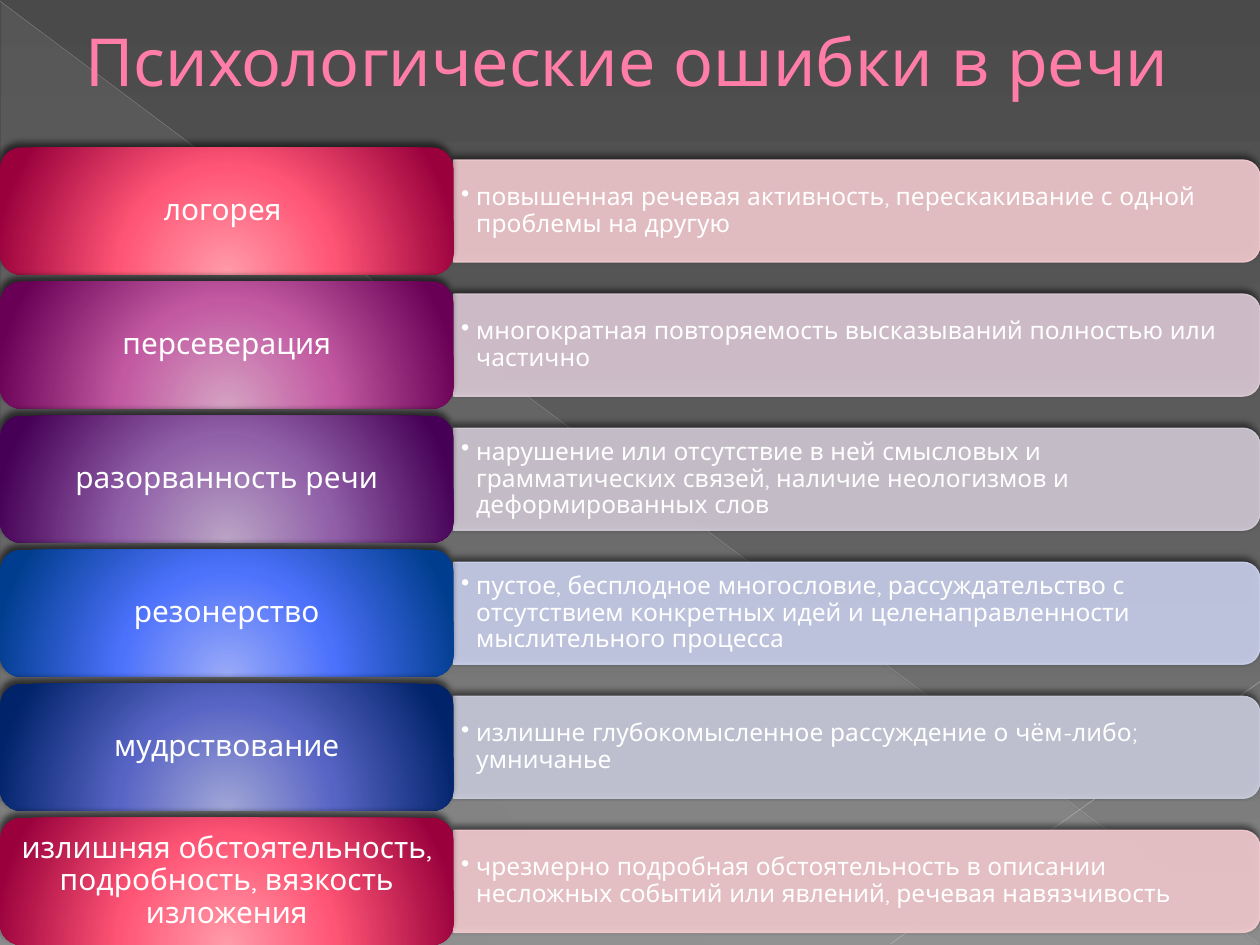
from lxml import etree
from pptx import Presentation
from pptx.dml.color import RGBColor
from pptx.enum.shapes import MSO_CONNECTOR, MSO_SHAPE
from pptx.enum.text import MSO_ANCHOR, PP_ALIGN
from pptx.oxml.ns import qn
from pptx.util import Emu, Inches, Pt

STRAIGHT = MSO_CONNECTOR.STRAIGHT
TRIANGLE = MSO_SHAPE.RIGHT_TRIANGLE
ROUNDED = MSO_SHAPE.ROUNDED_RECTANGLE
ROUNDED_TOP = MSO_SHAPE.ROUND_2_SAME_RECTANGLE
MIDDLE = MSO_ANCHOR.MIDDLE
CENTER, LEFT = PP_ALIGN.CENTER, PP_ALIGN.LEFT

FONT = "Quicksand"
COLORS = {
    "text": "FFFFFF", "title": "FF7DA7", "title_outline": "B12761",
    "shadow": "000000", "triangle": "D2D2D2",
    "long_line": "BFBFBF", "short_line": "C6C6C6",
    "back_top": "4A4A4A", "back_middle": "626262", "back_bottom": "8C8C8C",
}
PALETTES = {
    "red": ("F5CCD1", "FF9BA9", "FF5575", "99003C"),
    "magenta": ("DECCD8", "D5A2C3", "C259A1", "690055"),
    "purple": ("D4CCD8", "BBA5C6", "905FA8", "460055"),
    "blue": ("CCD2EF", "9AAAF8", "4C71FB", "003D8E"),
    "indigo": ("CCCEDF", "A1A6D6", "5864C4", "00236A"),
}
ROWS = [
    ("red", "логорея ",
     "повышенная речевая активность, перескакивание с одной проблемы на другую"),
    ("magenta", "персеверация",
     "многократная повторяемость высказываний полностью или частично"),
    ("purple", "разорванность речи",
     "нарушение или отсутствие в ней смысловых и грамматических связей, "
     "наличие неологизмов и деформированных слов"),
    ("blue", "резонерство",
     "пустое, бесплодное многословие, рассуждательство с отсутствием "
     "конкретных идей и целенаправленности мыслительного процесса"),
    ("indigo", "мудрствование",
     "излишне глубокомысленное рассуждение о чём-либо; умничанье"),
    ("red", "излишняя обстоятельность, подробность, вязкость изложения",
     "чрезмерно подробная обстоятельность в описании несложных событий "
     "или явлений, речевая навязчивость"),
]
SLIDE_WIDTH, SLIDE_HEIGHT = Inches(10), Inches(7.5)
LABEL_WIDTH, LABEL_HEIGHT = Inches(3.6), Inches(1.01)
BAR_HEIGHT = Inches(0.81)
FIRST_TOP = Inches(1.17)
PITCH = (SLIDE_HEIGHT - LABEL_HEIGHT - FIRST_TOP) / (len(ROWS) - 1)


def add_node(parent, tag, **attributes):
    values = {name: str(value) for name, value in attributes.items()}
    return etree.SubElement(parent, qn(tag), values)


def add_color(parent, color, opacity=100):
    node = add_node(parent, "a:srgbClr", val=color)
    add_node(node, "a:alpha", val=opacity * 1000)


def set_opacity(element, opacity):
    for color in element.iter(qn("a:srgbClr")):
        add_node(color, "a:alpha", val=opacity * 1000)


def set_gradient(element, fill, stops, angle=None):
    fill.solid()
    solid = element.find(".//" + qn("a:solidFill"))
    gradient = etree.Element(qn("a:gradFill"), rotWithShape="1")
    stop_list = add_node(gradient, "a:gsLst")
    for position, *color in stops:
        add_color(add_node(stop_list, "a:gs", pos=position * 1000), *color)
    if angle is None:
        circle = add_node(gradient, "a:path", path="circle")
        add_node(circle, "a:fillToRect", l=50000, t=155000, r=50000, b=-55000)
    else:
        add_node(gradient, "a:lin", ang=angle * 60000, scaled=0)
    solid.getparent().replace(solid, gradient)


def write_text(frame, text, size, color=COLORS["text"], align=CENTER,
               margins=(0, 0), line_spacing=None, bullet=False, outline=None):
    frame.word_wrap = True
    frame.vertical_anchor = MIDDLE
    frame.margin_left = frame.margin_right = Inches(margins[0])
    frame.margin_top = frame.margin_bottom = Inches(margins[1])
    paragraph = frame.paragraphs[0]
    paragraph.alignment = align
    paragraph.line_spacing = line_spacing
    run = paragraph.add_run()
    run.text = text
    run.font.size = Pt(size)
    run.font.name = FONT
    run.font.color.rgb = RGBColor.from_string(color)
    if bullet:
        paragraph.level = 1
        properties = paragraph._p.get_or_add_pPr()
        properties.set("marL", str(Inches(0.12)))
        properties.set("indent", str(-Inches(0.12)))
        add_node(properties, "a:buChar", char="•")
    if outline:
        properties = run._r.get_or_add_rPr()
        line = etree.Element(qn("a:ln"), w=str(Pt(0.5)))
        add_color(add_node(line, "a:solidFill"), outline)
        properties.insert(0, line)


class SlideBuilder:
    def __init__(self, presentation):
        self.slide = presentation.slides.add_slide(presentation.slide_layouts[5])
        self.shapes = self.slide.shapes

    def background(self, stops):
        set_gradient(self.slide.element, self.slide.background.fill, stops, 90)

    def title(self, text, left, top, width, height):
        title = self.shapes.title
        title.left, title.top, title.width, title.height = left, top, width, height
        write_text(title.text_frame, text, 37.8, color=COLORS["title"],
                   outline=COLORS["title_outline"])
        title.element.getparent().append(title.element)

    def shape(self, kind, left, top, width, height, shadow=True):
        shape = self.shapes.add_shape(kind, Emu(int(left)), Emu(int(top)), width, height)
        shape.shadow.inherit = False
        shape.line.fill.background()
        if shadow:
            effects = shape.element.spPr.find(qn("a:effectLst"))
            outer = add_node(effects, "a:outerShdw", blurRad=Pt(4), dist=Pt(3),
                             dir=245 * 60000, rotWithShape=0)
            add_color(outer, COLORS["shadow"], 60)
        return shape

    def line(self, start, end, color, width, opacity):
        points = [Inches(value) for value in (*start, *end)]
        connector = self.shapes.add_connector(STRAIGHT, *points)
        connector.line.color.rgb = RGBColor.from_string(color)
        connector.line.width = Pt(width)
        properties = connector.element.spPr
        set_opacity(properties, opacity)
        add_node(properties, "a:effectLst")

    def bar(self, center, color):
        length = SLIDE_WIDTH - LABEL_WIDTH
        left = LABEL_WIDTH + (length - BAR_HEIGHT) / 2
        bar = self.shape(ROUNDED_TOP, left, center - length / 2, BAR_HEIGHT, length)
        bar.rotation = 90
        effects = bar.element.spPr.find(qn("a:effectLst"))
        bar.element.spPr.remove(effects)
        bar.fill.solid()
        bar.fill.fore_color.rgb = RGBColor.from_string(color)
        bar.line.color.rgb = RGBColor.from_string(color)
        bar.line.width = Pt(0.75)
        set_opacity(bar.element.spPr, 90)
        bar.element.spPr.append(effects)

    def description(self, center, text):
        height = Inches(0.73)
        box = self.shapes.add_textbox(LABEL_WIDTH, Emu(int(center - height / 2)),
                                      Inches(6.36), height)
        write_text(box.text_frame, text, 14, align=LEFT, margins=(0.06, 0.03),
                   line_spacing=0.9, bullet=True)

    def label(self, center, text, colors):
        label = self.shape(ROUNDED, 0, center - LABEL_HEIGHT / 2, LABEL_WIDTH, LABEL_HEIGHT)
        set_gradient(label.element, label.fill, zip((0, 46, 100), colors))
        write_text(label.text_frame, text, 17, margins=(0.07, 0.04), line_spacing=0.9)


def main():
    presentation = Presentation()
    presentation.slide_width, presentation.slide_height = SLIDE_WIDTH, SLIDE_HEIGHT
    builder = SlideBuilder(presentation)
    builder.background([(0, COLORS["back_top"]), (60, COLORS["back_middle"]),
                        (100, COLORS["back_bottom"])])
    triangle = builder.shape(TRIANGLE, Inches(0.01), Inches(0.02),
                             Inches(9.98), Inches(7.48), shadow=False)
    stops = [(position, COLORS["triangle"], opacity)
             for position, opacity in ((0, 10), (70, 8), (100, 1))]
    set_gradient(triangle.element, triangle.fill, stops, 133)
    builder.line((0, 0.01), (9.99, 7.49), COLORS["long_line"], 0.39, 35)
    builder.line((10, 5.41), (7.07, 7.49), COLORS["short_line"], 0.47, 45)
    builder.title("Психологические ошибки в речи ",
                  Inches(0.55), 0, Inches(9), Inches(0.96))
    for index, (palette, label, description) in enumerate(ROWS):
        bar_color, *label_colors = PALETTES[palette]
        center = FIRST_TOP + LABEL_HEIGHT / 2 + index * PITCH
        builder.bar(center, bar_color)
        builder.description(center, description)
        builder.label(center, label, label_colors)
    presentation.save("out.pptx")


if __name__ == "__main__":
    main()
